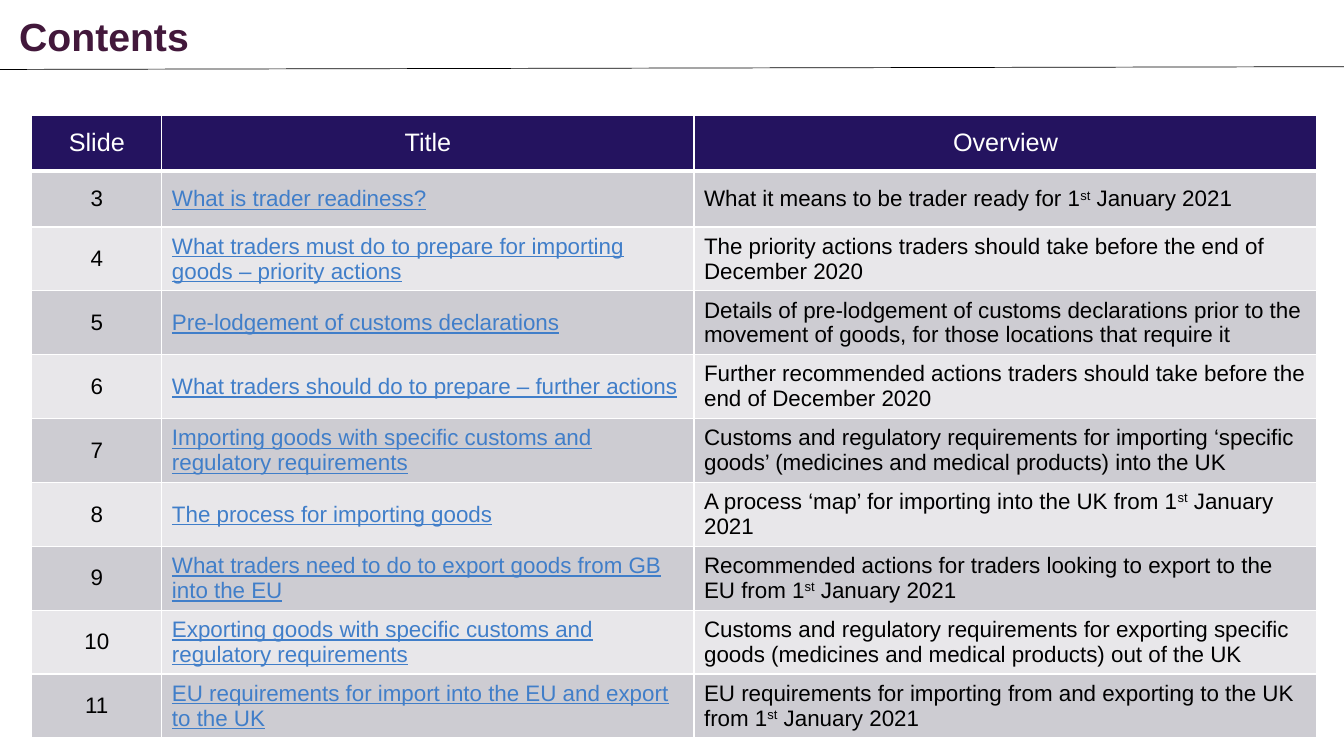
from dataclasses import dataclass

from lxml import etree
from pptx import Presentation
from pptx.dml.color import RGBColor
from pptx.enum.shapes import MSO_CONNECTOR
from pptx.enum.text import MSO_ANCHOR, MSO_AUTO_SIZE, PP_ALIGN
from pptx.oxml.ns import qn
from pptx.util import Cm, Pt

CENTER = PP_ALIGN.CENTER
LEFT = PP_ALIGN.LEFT
MIDDLE = MSO_ANCHOR.MIDDLE
FIT_SHAPE = MSO_AUTO_SIZE.SHAPE_TO_FIT_TEXT
STRAIGHT = MSO_CONNECTOR.STRAIGHT
TITLE_ONLY_LAYOUT = 5


@dataclass(frozen=True)
class Theme:
    font: str = "Arial"
    title_size: int = 28
    header_size: int = 18
    body_size: int = 16
    plum: str = "42183B"
    navy: str = "24135F"
    link_blue: str = "407EC9"
    black: str = "000000"
    white: str = "FFFFFF"
    bands: tuple = ("CDCCD2", "E8E7EA")


THEME = Theme()
SLIDE_WIDTH = Cm(33.87)
COLUMN_WIDTHS = (Cm(3.28), Cm(13.41), Cm(15.7))
HEADER_HEIGHT = Cm(1.41)
ROW_HEIGHT = Cm(1.55)
HEADINGS = ("Slide", "Title", "Overview")
FIRST_ENTRY_SLIDE = 3
ENTRIES = (
    ("What is trader readiness?",
     "What it means to be trader ready for 1st January 2021"),
    ("What traders must do to prepare for importing goods – priority actions",
     "The priority actions traders should take before the end of December 2020"),
    ("Pre-lodgement of customs declarations",
     "Details of pre-lodgement of customs declarations prior to the movement of goods, "
     "for those locations that require it"),
    ("What traders should do to prepare – further actions",
     "Further recommended actions traders should take before the end of December 2020"),
    ("Importing goods with specific customs and regulatory requirements",
     "Customs and regulatory requirements for importing ‘specific goods’ "
     "(medicines and medical products) into the UK"),
    ("The process for importing goods",
     "A process ‘map’ for importing into the UK from 1st January 2021"),
    ("What traders need to do to export goods from GB into the EU",
     "Recommended actions for traders looking to export to the EU from 1st January 2021"),
    ("Exporting goods with specific customs and regulatory requirements",
     "Customs and regulatory requirements for exporting specific goods "
     "(medicines and medical products) out of the UK"),
    ("EU requirements for import into the EU and export to the UK",
     "EU requirements for importing from and exporting to the UK from 1st January 2021"),
)


def format_run(run, size, color, bold=False, underline=False):
    run.font.name = THEME.font
    run.font.size = Pt(size)
    run.font.bold = bold
    run.font.underline = underline
    run.font.color.rgb = RGBColor.from_string(color)


def add_title(slide, text):
    title = slide.shapes.title
    title.left, title.top, title.width, title.height = Cm(0.23), Cm(0.18), Cm(14.91), Cm(1.45)
    frame = title.text_frame
    frame.text = text
    frame.word_wrap = True
    frame.auto_size = FIT_SHAPE
    frame.vertical_anchor = MIDDLE
    paragraph = frame.paragraphs[0]
    paragraph.alignment = LEFT
    format_run(paragraph.runs[0], THEME.title_size, THEME.plum, bold=True)


def add_rule(slide):
    rule = slide.shapes.add_connector(STRAIGHT, 0, Cm(1.75), SLIDE_WIDTH, Cm(1.68))
    rule.line.color.rgb = RGBColor.from_string(THEME.black)
    rule.line.width = Pt(0.5)
    etree.SubElement(rule._element.spPr, qn("a:effectLst"))


def set_borders(cell, bottom_width):
    properties = cell._tc.get_or_add_tcPr()
    widths = {"a:lnL": 1, "a:lnR": 1, "a:lnT": 1, "a:lnB": bottom_width}
    for position, (tag, width) in enumerate(widths.items()):
        border = etree.Element(qn(tag), w=str(Pt(width)))
        fill = etree.SubElement(border, qn("a:solidFill"))
        etree.SubElement(fill, qn("a:srgbClr"), val=THEME.white)
        properties.insert(position, border)


def fill_cell(cell, text, fill, size, color, alignment=LEFT, underline=False, bottom_width=1):
    cell.fill.solid()
    cell.fill.fore_color.rgb = RGBColor.from_string(fill)
    cell.vertical_anchor = MIDDLE
    set_borders(cell, bottom_width)
    paragraph = cell.text_frame.paragraphs[0]
    paragraph.alignment = alignment
    before, ordinal, after = text.partition("1st")
    parts = (before + "1", "st", after) if ordinal else (text,)
    for part in parts:
        run = paragraph.add_run()
        run.text = part
        format_run(run, size, color, underline=underline)
        if part == "st":
            run._r.get_or_add_rPr().set("baseline", "30000")


def add_contents_table(slide):
    height = HEADER_HEIGHT * 2 + ROW_HEIGHT * (len(ENTRIES) - 1)
    table = slide.shapes.add_table(
        len(ENTRIES) + 1, len(HEADINGS), Cm(0.8), Cm(2.9), sum(COLUMN_WIDTHS), height
    ).table
    for column, width in zip(table.columns, COLUMN_WIDTHS):
        column.width = width
    for index, row in enumerate(table.rows):
        row.height = HEADER_HEIGHT if index < 2 else ROW_HEIGHT
    for column, heading in enumerate(HEADINGS):
        fill_cell(table.cell(0, column), heading, THEME.navy, THEME.header_size,
                  THEME.white, CENTER, bottom_width=3)
    for index, (title, overview) in enumerate(ENTRIES):
        number, link, summary = table.rows[index + 1].cells
        band = THEME.bands[index % 2]
        size = THEME.body_size
        fill_cell(number, str(FIRST_ENTRY_SLIDE + index), band, size, THEME.black, CENTER)
        fill_cell(link, title, band, size, THEME.link_blue, underline=True)
        fill_cell(summary, overview, band, size, THEME.black)


def main():
    presentation = Presentation()
    presentation.slide_width = SLIDE_WIDTH
    presentation.slide_height = Cm(19.05)
    slide = presentation.slides.add_slide(presentation.slide_layouts[TITLE_ONLY_LAYOUT])
    add_contents_table(slide)
    add_title(slide, "Contents")
    add_rule(slide)
    presentation.save("out.pptx")


if __name__ == "__main__":
    main()
